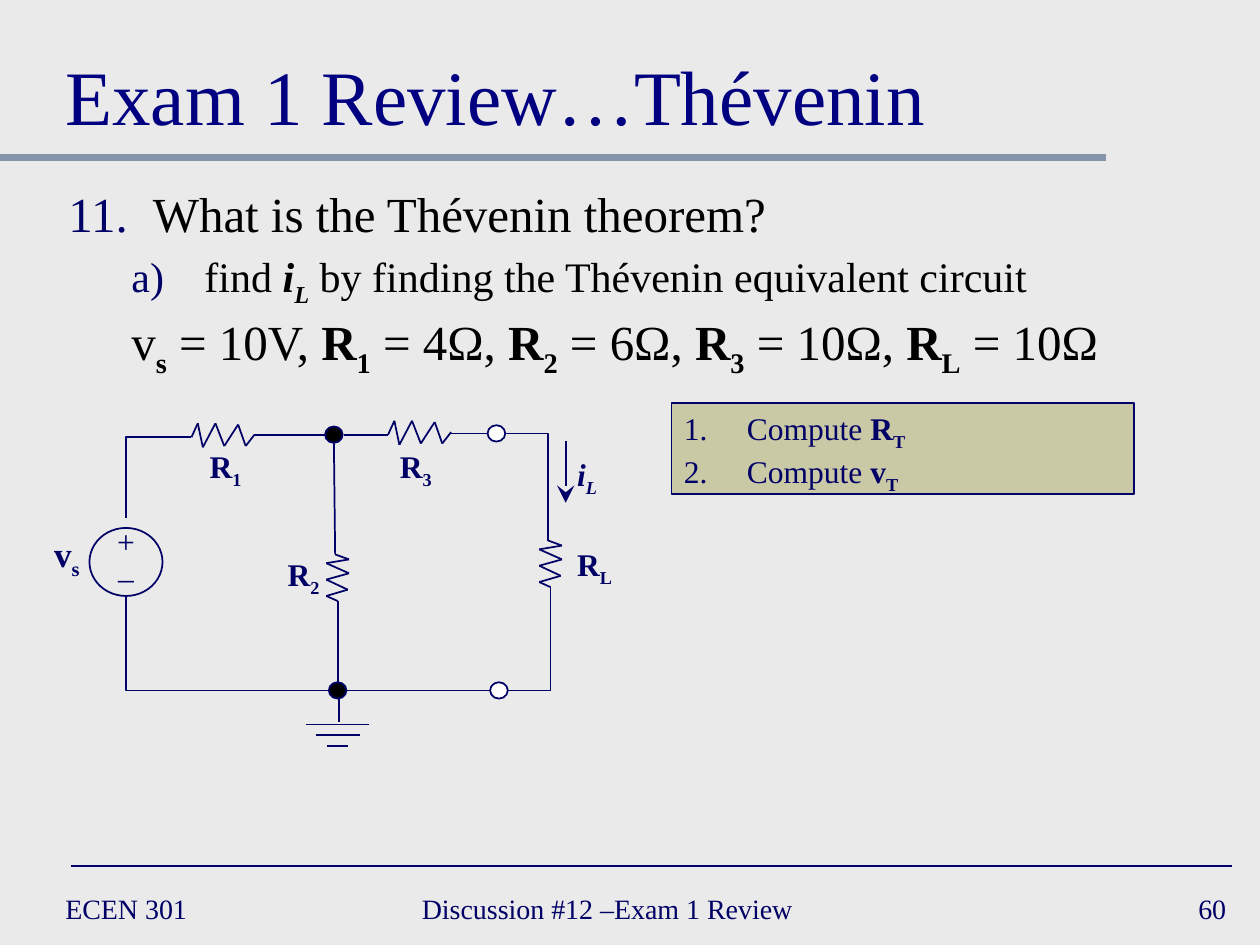
from itertools import pairwise
from typing import NamedTuple

from lxml.etree import SubElement as Sub
from pptx import Presentation
from pptx.dml.color import RGBColor
from pptx.enum.shapes import MSO_CONNECTOR as Conn, MSO_SHAPE as Geo
from pptx.enum.text import MSO_ANCHOR as Anchor, MSO_AUTO_SIZE as Fit, PP_ALIGN as Align
from pptx.oxml.ns import qn
from pptx.util import Inches, Pt

INK, BLACK, WHITE = "000066", "000000", "FFFFFF"
FONT = "Times New Roman"
COLS, ROWS = 100, 75

deck = Presentation()
deck.slide_width, deck.slide_height = Inches(10), Inches(7.5)
slide = deck.slides.add_slide(deck.slide_layouts[5])
shapes = slide.shapes

Point = tuple[float, float]


class Box(NamedTuple):
    """Left, top, width and height in grid columns and rows."""
    x: float
    y: float
    w: float
    h: float


class Label(NamedTuple):
    text: str
    x: float
    y: float
    size: float = 18
    slant: bool = False


class Item(NamedTuple):
    text: str
    size: float
    left: float
    hang: float
    kind: str = ""
    start: int = 1
    before: float = 0


def col(n: float) -> int:
    return round(n * deck.slide_width / COLS)


def row(n: float) -> int:
    return round(n * deck.slide_height / ROWS)


def place(box: Box) -> tuple[int, int, int, int]:
    return col(box.x), row(box.y), col(box.w), row(box.h)


def paint(fmt, tint: str) -> None:
    """Colour a fill, or the fill of a line."""
    fmt.solid()
    fmt.fore_color.rgb = RGBColor.from_string(tint)


def style(font, size: float, tint: str) -> None:
    font.name, font.size = FONT, Pt(size)
    font.color.rgb = RGBColor.from_string(tint)


def write(para, text: str, size: float, tint: str = INK, slant: bool = False) -> None:
    """Bars split the text into plain, bold and bold subscript parts, in turn."""
    for i, part in enumerate(text.split("|")):
        if not part:
            continue
        run = para.add_run()
        run.text = part
        style(run.font, size, tint)
        run.font.bold = i % 3 > 0
        run.font.italic = slant and i % 3 > 0
        if i % 3 == 2:
            run.font._element.set("baseline", "-25000")


def wire(a: Point, b: Point, tint: str = INK, width: float = 1,
         bent: bool = False, arrow: bool = False) -> None:
    """A bent wire leaves its start sideways and turns once."""
    kind = Conn.ELBOW if bent else Conn.STRAIGHT
    line = shapes.add_connector(kind, col(a[0]), row(a[1]), col(b[0]), row(b[1]))
    props = line._element.spPr
    if bent:
        props.find(qn("a:prstGeom")).set("prst", "bentConnector2")
    paint(line.line.fill, tint)
    line.line.width = Pt(width)
    if arrow:
        Sub(props.find(qn("a:ln")), qn("a:tailEnd"), type="stealth", w="lg", len="lg")
    Sub(props, qn("a:effectLst"))


def chain(start: Point, steps: list[Point]) -> None:
    """Draw a resistor from offsets to its start."""
    spots = [(start[0] + dx, start[1] + dy) for dx, dy in steps]
    for a, b in pairwise(spots):
        wire(a, b)


def solid(geo: Geo, box: Box, fill: str | None):
    shape = shapes.add_shape(geo, *place(box))
    shape.shadow.inherit = False
    if fill:
        paint(shape.fill, fill)
    else:
        shape.fill.background()
    paint(shape.line.fill, INK)
    shape.line.width = Pt(1)
    return shape


def node(x: float, y: float, fill: str) -> None:
    solid(Geo.OVAL, Box(x - 0.7, y - 0.65, 1.4, 1.3), fill)


def frame(box: Box, wrap: bool = True, anchor: Anchor = Anchor.TOP):
    body = shapes.add_textbox(*place(box)).text_frame
    body.word_wrap, body.vertical_anchor = wrap, anchor
    return body


def rows(body, items: list[Item], tint: str, space: float = 1) -> None:
    for i, item in enumerate(items):
        para = body.add_paragraph() if i else body.paragraphs[0]
        para.alignment, para.line_spacing = Align.LEFT, space
        para.space_before = Pt(item.before)
        props = para._p.get_or_add_pPr()
        props.set("marL", str(col(item.left)))
        props.set("indent", str(-col(item.hang)))
        if item.kind:
            Sub(Sub(props, qn("a:buClr")), qn("a:srgbClr"), val=INK)
            Sub(props, qn("a:buAutoNum"), type=item.kind, startAt=str(item.start))
        write(para, item.text, item.size, tint, slant="|i|" in item.text)


paint(slide.background.fill, "EAEAEA")
wire((0, 12.5), (87.8, 12.5), "8495A9", 4)
wire((5.6, 68.75), (97.8, 68.75))

title = shapes.title
title.left, title.top, title.width, title.height = place(Box(4.2, 1.7, 91.7, 10))
head = title.text_frame
head.text = "Exam 1 Review…Thévenin"
head.vertical_anchor, head.auto_size = Anchor.BOTTOM, Fit.NONE
head.paragraphs[0].alignment = Align.LEFT
style(head.paragraphs[0].runs[0].font, 44, "000080")

for text, x, w, side in [("ECEN 301", 4.2, 21.7, Align.LEFT),
                         ("Discussion #12 –Exam 1 Review", 32.5, 38.3, Align.LEFT),
                         ("60", 77.5, 20.8, Align.RIGHT)]:
    foot = frame(Box(x, 70, w, 4.2), anchor=Anchor.MIDDLE).paragraphs[0]
    foot.alignment = side
    write(foot, text, 16)

rows(frame(Box(4.45, 14.6, 91.4, 15.4)), [
    Item("What is the Thévenin theorem?", 28, 6.7, 6.7, "arabicPeriod", 11),
    Item("find |i|L| by finding the Thévenin equivalent circuit", 24, 10.8, 5.8,
         "alphaLcParenR", before=4.8),
    Item("v||s| = 10V, |R|1| = 4Ω, |R|2| = 6Ω, |R|3| = 10Ω, |R|L| = 10Ω",
         28, 10.8, 5.8, before=5.6),
], BLACK, 0.9)

panel = solid(Geo.RECTANGLE, Box(53.3, 32, 36.7, 7.2), "ACA964")
Sub(panel._element.spPr.find(qn("a:solidFill"))[0], qn("a:alpha"), val="50000")
panel.text_frame.vertical_anchor = Anchor.TOP
rows(panel.text_frame, [Item(text, 18, 5, 5, "arabicPeriod")
                        for text in ("Compute |R|T", "Compute |v|T")], INK)

# Resistors
ACROSS = [(0, 0), (0.5, -1.1), (0.9, 0.8), (1.9, -1.1), (2.6, 0.7),
          (3.7, -1), (4.3, 0.7), (5, -0.2)]
DOWN = [(0, 0), (1.1, 0.4), (-0.7, 0.7), (1.1, 1.5), (-0.7, 2),
        (1, 2.8), (-0.7, 3.3), (0.2, 3.7)]
for start, steps in [((15.2, 34.7), ACROSS), ((30.8, 34.5), ACROSS),
                     ((26.6, 44), DOWN), ((43.5, 42.9), DOWN)]:
    chain(start, steps)

# Wires and ground
for a, b in [((20.2, 34.5), (25.8, 34.5)), ((27.3, 34.5), (30.8, 34.5)),
             ((35.8, 34.4), (38.7, 34.4)), ((26.5, 35.2), (26.6, 44)),
             ((26.8, 47.7), (26.8, 54.2)), ((27.5, 54.8), (38.9, 54.8)),
             ((26.9, 54.8), (26.9, 57.3))]:
    wire(a, b)
for a, b in [((15.2, 34.7), (10, 41.1)), ((26.1, 54.8), (10, 47.3)),
             ((40.3, 54.8), (43.7, 46.6)), ((40.2, 34.4), (43.5, 42.9))]:
    wire(a, b, bent=True)
for i, half in enumerate([2.5, 1.75, 0.85]):
    y = 57.5 + 0.85 * i
    wire((26.8 - half, y), (26.8 + half, y))
wire((44.9, 35), (44.9, 39.9), arrow=True)

for x, y, fill in [(26.5, 34.5, BLACK), (26.8, 54.8, BLACK),
                   (39.4, 34.4, WHITE), (39.6, 54.8, WHITE)]:
    node(x, y, fill)

# Voltage source
solid(Geo.OVAL, Box(7.1, 41.9, 5.8, 5.4), None)
signs = frame(Box(8.3, 41, 3.4, 7), wrap=False)
signs.text = "+\n–"
for para in signs.paragraphs:
    para.alignment, para.line_spacing = Align.CENTER, Pt(21)
    style(para.runs[0].font, 18, INK)

for tag in [Label("|R|1", 17.9, 37), Label("|R|3", 33, 37), Label("|R|2", 24.1, 45.6),
            Label("|R|L", 47.2, 44.8), Label("|v|s", 5.3, 43.8, 20),
            Label("|i|L", 46.6, 37.6, slant=True)]:
    para = frame(Box(tag.x - 2.5, tag.y - 2, 5, 4), wrap=False).paragraphs[0]
    para.alignment = Align.CENTER
    write(para, tag.text, tag.size, slant=tag.slant)

deck.save("out.pptx")
